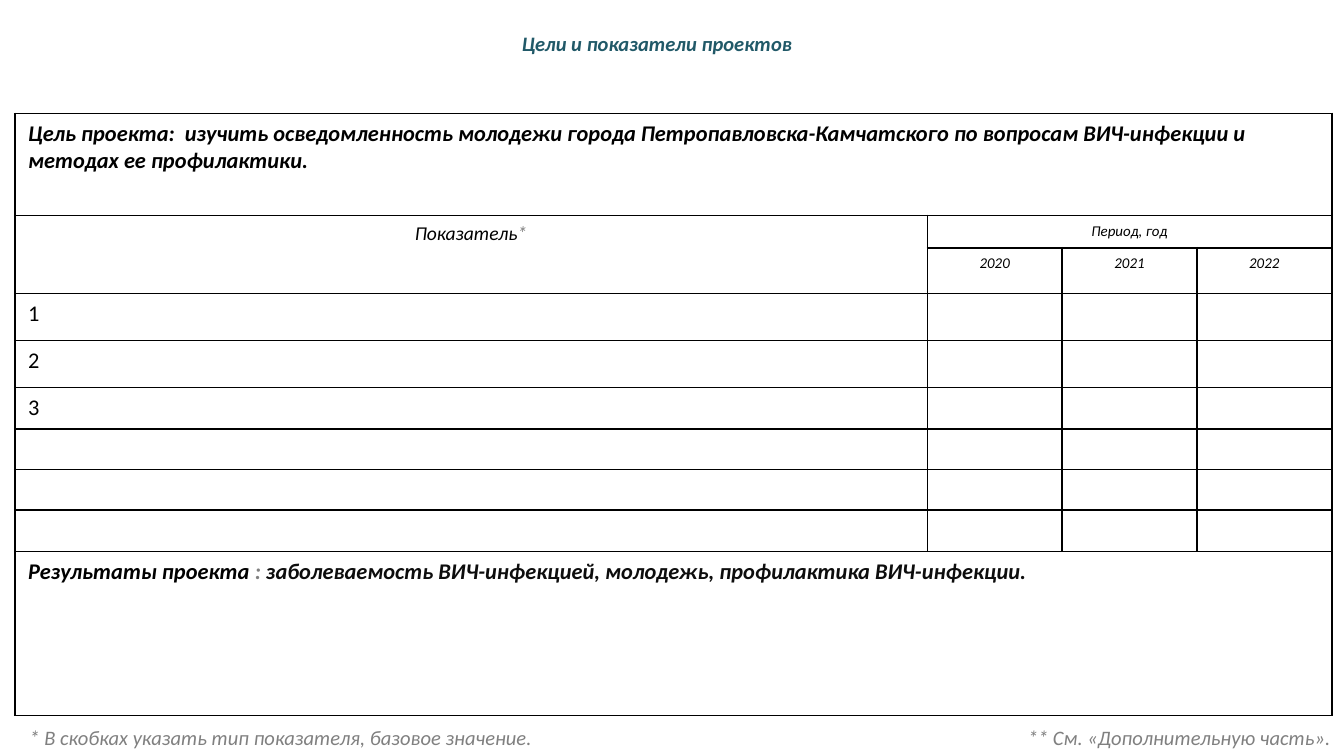
"""Build the slide with the project's goals and indicators."""
import pptx
import pptx.dml.color
import pptx.enum.text
import pptx.oxml.ns
import pptx.util
from lxml import etree

RGB = pptx.dml.color.RGBColor
ALIGN = pptx.enum.text.PP_ALIGN
BLACK = RGB(0, 0, 0)
DARK = RGB(0x0D, 0x0D, 0x0D)
GREY = RGB(0x80, 0x80, 0x80)
TEAL = RGB(0x21, 0x59, 0x68)
WIDE = 10
HIGH = WIDE * 9 / 16
SPAN = 0.98 * WIDE
FIRST = 6.79
YEARS = ["2020", "2021", "2022"]
COLS = [FIRST] + [(SPAN - FIRST) / len(YEARS)] * len(YEARS)
ROWS = [0.76, 0.24, 0.34, 0.35, 0.35, 0.31, 0.3, 0.3, 0.31, 1.22]
MERGED = [(0, 0, 0, 3), (1, 0, 2, 0), (1, 1, 1, 3), (9, 0, 9, 3)]


def write(frame, text, size=11, color=BLACK, bold=False, slant=True, align=ALIGN.LEFT):
    para = frame.paragraphs[0]
    para.alignment = align
    run = para.add_run()
    run.text = text
    font = run.font
    font.name, font.size = "Calibri", pptx.util.Pt(size)
    font.bold, font.italic = bold, slant
    font.color.rgb = color


def add_note(slide, left, text, align):
    box = slide.shapes.add_textbox(*map(pptx.util.Inches, (left, 0.95 * HIGH, 4.88, 0.29)))
    box.text_frame.word_wrap = True
    write(box.text_frame, text, color=GREY, align=align)


def add_sub(node, tag, **attrs):
    return etree.SubElement(node, pptx.oxml.ns.qn(tag), **attrs)


def style_cell(cell):
    props = cell._tc.get_or_add_tcPr()
    for side in "LRTB":
        line = add_sub(props, f"a:ln{side}", w=str(pptx.util.Pt(1)))
        fill = add_sub(line, "a:solidFill")
        add_sub(fill, "a:srgbClr", val=str(BLACK))
    cell.fill.background()
    para = cell.text_frame.paragraphs[0]
    if not para.runs:
        add_sub(para._p, "a:endParaRPr", sz="800")


def add_grid(slide):
    frame = slide.shapes.add_table(
        len(ROWS), len(COLS),
        *map(pptx.util.Inches, (0.11, 0.15 * HIGH, SPAN, sum(ROWS))))
    table = frame.table
    table.first_row = table.horz_banding = False
    for col, width in zip(table.columns, COLS):
        col.width = pptx.util.Inches(width)
    for row, height in zip(table.rows, ROWS):
        row.height = pptx.util.Inches(height)
    for top, left, end, right in MERGED:
        table.cell(top, left).merge(table.cell(end, right))
    return table


def fill_grid(table):
    def put(row, col, text, **form):
        write(table.cell(row, col).text_frame, text, **form)

    mid = ALIGN.CENTER
    put(0, 0, "Цель проекта:  изучить осведомленность молодежи города "
        "Петропавловска-Камчатского по вопросам ВИЧ-инфекции и методах ее "
        "профилактики.", size=12, bold=True)
    put(1, 0, "Показатель", size=10.5, align=mid)
    put(1, 0, "*", size=10.5, color=GREY, align=mid)
    put(1, 1, "Период, год", size=8, align=mid)
    for col, year in enumerate(YEARS, 1):
        put(2, col, year, size=8, align=mid)
    for num in range(1, 4):
        put(num + 2, 0, str(num), size=12, slant=False)
    put(9, 0, "Результаты проекта ", size=12, bold=True)
    put(9, 0, ": ", size=12, color=GREY, bold=True)
    put(9, 0, "заболеваемость ВИЧ-инфекцией, молодежь, профилактика ВИЧ-инфекции.",
        size=12, color=DARK, bold=True)
    for cell in table.iter_cells():
        style_cell(cell)


def set_title(slide):
    title = slide.shapes.title
    title.left, title.top, title.width, title.height = map(
        pptx.util.Inches, (2.56, 0.18, 4.66, 0.29))
    write(title.text_frame, "Цели и показатели проектов", color=TEAL,
          bold=True, align=ALIGN.CENTER)


def main():
    deck = pptx.Presentation()
    deck.slide_width = pptx.util.Inches(WIDE)
    deck.slide_height = pptx.util.Inches(HIGH)
    slide = deck.slides.add_slide(deck.slide_layouts[5])
    fill_grid(add_grid(slide))
    set_title(slide)
    add_note(slide, 0.12, "* В скобках указать тип показателя, базовое значение.", ALIGN.LEFT)
    add_note(slide, 5.12, "** См. «Дополнительную часть».", ALIGN.RIGHT)
    deck.save("out.pptx")


if __name__ == "__main__":
    main()
